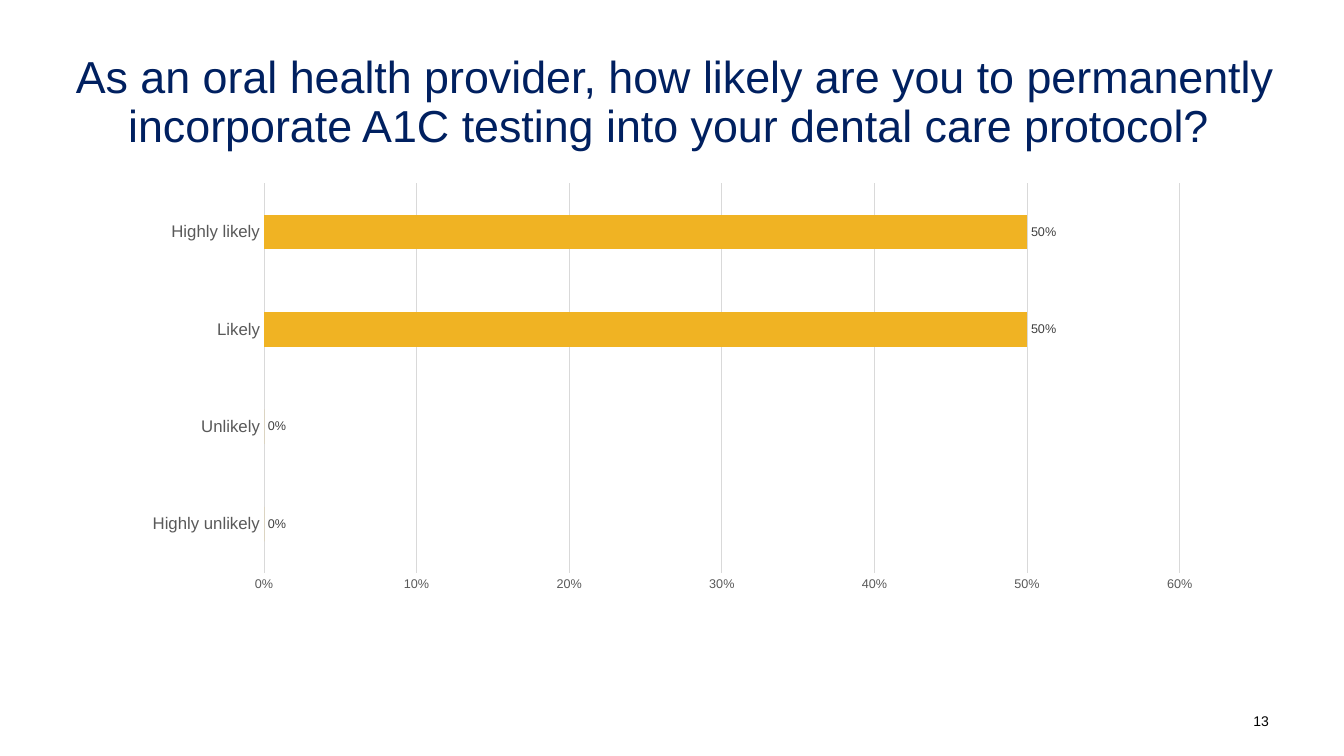
"""Build the survey slide on permanent A1C testing in dental care."""
from dataclasses import dataclass

from pptx import Presentation
from pptx.chart.data import CategoryChartData
from pptx.dml.color import RGBColor
from pptx.enum.chart import XL_CHART_TYPE, XL_LABEL_POSITION, XL_TICK_MARK
from pptx.enum.text import MSO_ANCHOR, PP_ALIGN
from pptx.util import Emu, Pt

QUESTION = ("As an oral health provider, how likely are you to permanently "
            "incorporate A1C testing into your dental care protocol? ")
PAGE_NUMBER = "13"
ANSWERS = {"Highly unlikely": 0, "Unlikely": 0, "Likely": 0.5, "Highly likely": 0.5}

SLIDE_SIZE = (1344, 756)
QUESTION_BOX = (67, 55, 1217, 113)
ANSWERS_BOX = (131, 175, 1083, 425)
PAGE_BOX = (1211, 713, 58, 17)
EMU_PER_PX = 914400 / 100.8


@dataclass(frozen=True)
class Theme:
    """Colours, font and type sizes of the slide."""
    font: str = "Arial"
    title: str = "002060"
    text: str = "000000"
    axis: str = "595959"
    label: str = "404040"
    grid: str = "D9D9D9"
    bar: str = "F0B323"
    title_size: int = 32
    category_size: int = 12
    base_size: int = 10
    value_size: int = 9


THEME = Theme()


def emu(lengths):
    """Turn px lengths into EMU."""
    return [Emu(round(px * EMU_PER_PX)) for px in lengths]


def style(font, size, colour):
    """Set the typeface, size and colour of a font."""
    font.name = THEME.font
    font.size = Pt(size)
    font.color.rgb = RGBColor.from_string(colour)


def rule(line):
    """Draw a line in the thin grid style."""
    line.color.rgb = RGBColor.from_string(THEME.grid)
    line.width = Pt(0.75)


def add_text(slide, box, words, size, colour, alignment, spacing=1.0):
    """Add a text box without margins."""
    frame = slide.shapes.add_textbox(*emu(box)).text_frame
    frame.word_wrap = True
    frame.vertical_anchor = MSO_ANCHOR.TOP
    frame.margin_left = frame.margin_right = frame.margin_top = frame.margin_bottom = 0
    paragraph = frame.paragraphs[0]
    paragraph.alignment = alignment
    paragraph.line_spacing = spacing
    run = paragraph.add_run()
    run.text = words
    style(run.font, size, colour)


def add_answers(slide):
    """Add the bar chart of the answers."""
    answers = CategoryChartData(number_format="0%")
    answers.categories = list(ANSWERS)
    answers.add_series("Series 1", list(ANSWERS.values()))
    chart = slide.shapes.add_chart(
        XL_CHART_TYPE.BAR_CLUSTERED, *emu(ANSWERS_BOX), answers).chart
    chart.has_legend = False
    chart.has_title = False
    style(chart.font, THEME.base_size, THEME.text)

    for axis, size in ((chart.category_axis, THEME.category_size),
                       (chart.value_axis, THEME.value_size)):
        axis.major_tick_mark = axis.minor_tick_mark = XL_TICK_MARK.NONE
        style(axis.tick_labels.font, size, THEME.axis)
    rule(chart.category_axis.format.line)
    percent = chart.value_axis
    percent.format.line.fill.background()
    percent.has_major_gridlines = True
    rule(percent.major_gridlines.format.line)
    percent.minimum_scale, percent.maximum_scale, percent.major_unit = 0, 0.6, 0.1
    percent.tick_labels.number_format = "0%"
    percent.tick_labels.number_format_is_linked = False

    plot = chart.plots[0]
    plot.gap_width = 182
    plot.vary_by_categories = False
    bars = plot.series[0]
    bars.format.fill.solid()
    bars.format.fill.fore_color.rgb = RGBColor.from_string(THEME.bar)
    labels = bars.data_labels
    labels.show_value = True
    labels.number_format = "0%"
    labels.number_format_is_linked = False
    labels.position = XL_LABEL_POSITION.OUTSIDE_END
    style(labels.font, THEME.value_size, THEME.label)


def main():
    """Assemble and save the slide."""
    deck = Presentation()
    deck.slide_width, deck.slide_height = emu(SLIDE_SIZE)
    slide = deck.slides.add_slide(deck.slide_layouts[6])
    add_text(slide, PAGE_BOX, PAGE_NUMBER, THEME.base_size, THEME.text, PP_ALIGN.RIGHT)
    add_text(slide, QUESTION_BOX, QUESTION, THEME.title_size, THEME.title,
             PP_ALIGN.CENTER, 0.9)
    add_answers(slide)
    deck.save("out.pptx")


if __name__ == "__main__":
    main()
